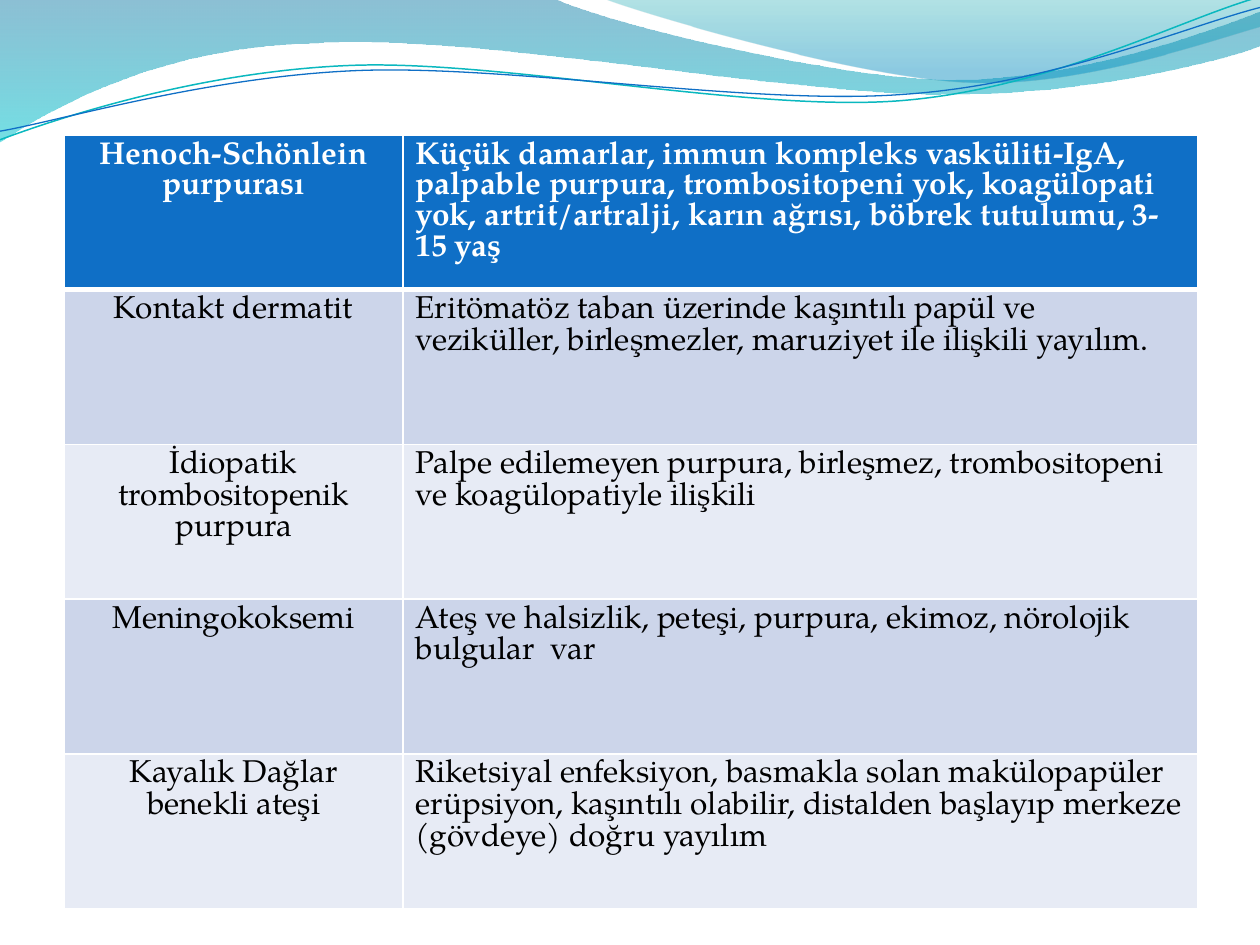
from lxml.etree import SubElement
from pptx import Presentation
from pptx.dml.color import RGBColor
from pptx.enum.text import PP_ALIGN
from pptx.oxml.ns import qn
from pptx.util import Pt

FONT = "TeX Gyre Pagella"
COLORS = {
    "white": "FFFFFF", "black": "000000", "header": "0F6FC6",
    "band_dark": "CCD5EA", "band_light": "E7EBF5",
    "deep_blue": "0074A1", "turquoise": "00C6CF",
    "teal": "00A1A9", "sky": "008BBF", "aqua_line": "0AB8BF",
}

# Outlines in points: a pair is a corner, a triple of pairs is a Bezier segment
LEFT_WAVE = [
    (0, 0), (316.8, -0.7),
    ((342.7, 12.2), (478.1, 45.4), (545.8, 45.4)),
    ((614.2, 45.4), (689.8, 18.7), (720, 6.5)),
    (720.7, 25.9),
    ((707.8, 31.7), (626.4, 54.7), (537.1, 54)),
    ((447.8, 54), (275, 20.2), (185, 24.5)),
    ((92.9, 25.9), (33.1, 59.8), (-0.7, 81.4)),
]
RIGHT_WAVE = [
    (344.9, -0.7),
    ((366.5, 7.9), (491, 44.6), (553.7, 46.8)),
    ((616.3, 49.7), (691.9, 23), (720, 15.1)),
    (720, 0),
]
# The two curves are given level, before they are tilted
TILT = 357.3
AQUA_CURVE = [
    (-1.4, 62.9),
    ((33.7, 51.7), (114, 29.4), (199.8, 29.9)),
    ((284.8, 30.3), (425.8, 67.2), (512.4, 64.9)),
    ((599, 62.4), (676.4, 25.7), (720.2, 15.6)),
]
BLUE_CURVE = [
    (-1.2, 58),
    ((33, 53.8), (118.3, 32.5), (204, 33)),
    ((290.5, 33.5), (428.9, 63.8), (515.5, 61.3)),
    ((601.3, 59.6), (678.5, 30.1), (721.4, 21.3)),
]

ROWS = [
    ("Henoch-Schönlein purpurası",
     "Küçük damarlar, immun kompleks vasküliti-IgA, palpable purpura, "
     "trombositopeni yok, koagülopati yok, artrit/artralji, karın ağrısı, "
     "böbrek tutulumu, 3-15 yaş"),
    ("Kontakt dermatit",
     "Eritömatöz taban üzerinde kaşıntılı papül ve veziküller, birleşmezler, "
     "maruziyet ile ilişkili yayılım."),
    ("İdiopatik trombositopenik purpura",
     "Palpe edilemeyen purpura, birleşmez, trombositopeni ve koagülopatiyle "
     "ilişkili"),
    ("Meningokoksemi",
     "Ateş ve halsizlik, peteşi, purpura, ekimoz, nörolojik bulgular  var"),
    ("Kayalık Dağlar benekli ateşi",
     "Riketsiyal enfeksiyon, basmakla solan makülopapüler erüpsiyon, kaşıntılı "
     "olabilir, distalden başlayıp merkeze (gövdeye) doğru yayılım"),
]


def rgb(name):
    return RGBColor.from_string(COLORS[name])


def add_outline(slide, left, top, outline, close):
    """Draw all points as lines, then join each triple into a Bezier segment."""
    parts = [part if isinstance(part[0], tuple) else (part,) for part in outline]
    points = [(left + Pt(x), top + Pt(y)) for part in parts for x, y in part]
    builder = slide.shapes.build_freeform(*points[0], scale=1.0)
    builder.add_line_segments(points[1:], close=close)
    sp = builder.convert_to_shape()
    sp.shadow.inherit = False
    lines = iter(list(sp._element.iter(qn("a:lnTo"))))
    for part in parts[1:]:
        segment = next(lines)
        if len(part) == 3:
            segment.tag = qn("a:cubicBezTo")
            for _ in range(2):
                line = next(lines)
                segment.append(line[0])
                line.getparent().remove(line)
    return sp


def add_wave(slide, left, top, outline, stops):
    """Filled wave; each stop is (position, colour, opacity in percent)."""
    sp = add_outline(slide, left, top, outline, True)
    sp.line.fill.background()
    sp.fill.gradient()
    sp.fill.gradient_angle = 270
    for stop, (position, color, _) in zip(sp.fill.gradient_stops, stops):
        stop.position = position
        stop.color.rgb = rgb(color)
    grad = sp._element.spPr.find(qn("a:gradFill"))
    for clr, (_, _, opacity) in zip(grad.iter(qn("a:srgbClr")), stops):
        SubElement(clr, qn("a:alpha"), val=str(opacity * 1000))


def add_curve(slide, left, top, outline, color, width):
    sp = add_outline(slide, left, top, outline, False)
    sp.rotation = TILT
    sp.fill.background()
    sp.line.color.rgb = rgb(color)
    sp.line.width = Pt(width)


def add_banner(slide, left, top):
    add_wave(slide, left, top, LEFT_WAVE,
             [(0, "deep_blue", 45), (1, "turquoise", 55)])
    add_wave(slide, left, top, RIGHT_WAVE, [(0, "teal", 30), (0.8, "sky", 45)])
    add_curve(slide, left, top, AQUA_CURVE, "aqua_line", 0.85)
    add_curve(slide, left, top, BLUE_CURVE, "header", 0.75)


def set_borders(cell, bottom):
    tcPr = cell._tc.get_or_add_tcPr()
    for i, (side, width) in enumerate(
            (("lnL", 1), ("lnR", 1), ("lnT", 1), ("lnB", bottom))):
        ln = SubElement(tcPr, qn(f"a:{side}"), w=str(Pt(width)))
        SubElement(SubElement(ln, qn("a:solidFill")), qn("a:srgbClr"),
                   val=COLORS["white"])
        tcPr.insert(i, ln)


def fill_cell(cell, text, header, align, fill):
    cell.fill.solid()
    cell.fill.fore_color.rgb = rgb(fill)
    set_borders(cell, 3 if header else 1)
    cell.text = text
    p = cell.text_frame.paragraphs[0]
    p.alignment = align
    font = p.runs[0].font
    font.name, font.size, font.bold = FONT, Pt(18), header
    font.color.rgb = rgb("white" if header else "black")


def add_diagnosis_table(slide, left, top, width, height):
    table = slide.shapes.add_table(len(ROWS), 2, left, top, width, height).table
    table.columns[0].width = Pt(193.6)
    table.columns[1].width = width - Pt(193.6)
    for r, texts in enumerate(ROWS):
        fill = "header" if r == 0 else ("band_light", "band_dark")[r % 2]
        for c, align in enumerate((PP_ALIGN.CENTER, PP_ALIGN.LEFT)):
            fill_cell(table.cell(r, c), texts[c], r == 0, align, fill)


def main():
    prs = Presentation()
    prs.slide_width, prs.slide_height = Pt(720), Pt(540)
    slide = prs.slides.add_slide(prs.slide_layouts[6])
    add_banner(slide, Pt(0), Pt(0))
    add_diagnosis_table(slide, Pt(36.7), Pt(77.2), Pt(648), Pt(442))
    prs.save("out.pptx")


if __name__ == "__main__":
    main()
